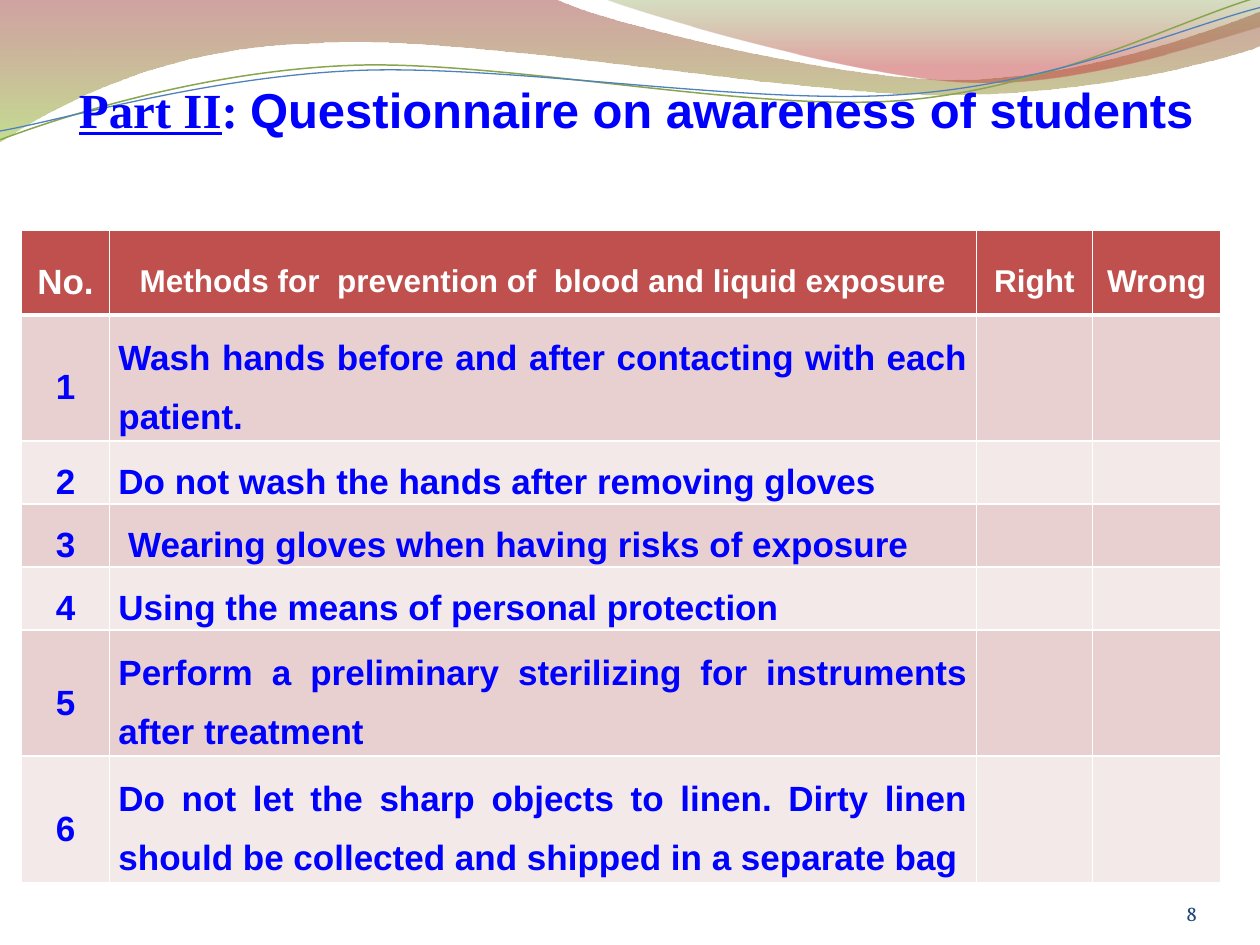
from lxml.etree import SubElement
from pptx import Presentation
from pptx.dml.color import RGBColor
from pptx.enum.text import MSO_ANCHOR as ANCHOR, PP_ALIGN as ALIGN
from pptx.oxml import parse_xml
from pptx.oxml.ns import nsdecls, qn
from pptx.util import Inches, Pt

BLUE = RGBColor(0x00, 0x00, 0xFF)
NAVY = RGBColor(0x1E, 0x46, 0x77)
WHITE = RGBColor(0xFF, 0xFF, 0xFF)
RED = RGBColor(0xC0, 0x50, 0x4D)
ROSE = RGBColor(0xE8, 0xD0, 0xD0)
PALE = RGBColor(0xF4, 0xE9, 0xE9)
GREEN_LINE = RGBColor(0x89, 0xA5, 0x4F)
BLUE_LINE = RGBColor(0x4F, 0x81, 0xBD)

# Content
TITLE = [("Part II", "Times New Roman", True),
         (": ", "Times New Roman", False),
         ("Questionnaire on awareness of students", "Arial", False)]
HEADER = ["No.", "Methods for  prevention of  blood and liquid exposure",
          "Right", "Wrong"]
METHODS = [
    "Wash hands before and after contacting with each patient. ",
    "Do not wash the hands after removing gloves ",
    " Wearing gloves when having risks of exposure",
    "Using the means of personal protection ",
    "Perform a preliminary sterilizing for instruments after treatment ",
    "Do not let the sharp objects to linen. Dirty linen should be collected "
    "and shipped in a separate bag",
]
COL_WIDTHS = [0.7, 6.88, 0.92, 1.02]
ROW_HEIGHTS = [0.67, 0.5, 0.35, 0.5, 0.48, 0.35, 0.77]
TABLE_HEIGHT = 5.17

# Waves: start point, then straight (2 numbers) or Bezier (6 numbers) pieces
BANDS = [
    ([(0, 0), (4.4, -0.01), (4.76, 0.17, 6.64, 0.63, 7.58, 0.63),
      (8.53, 0.63, 9.58, 0.26, 10, 0.09), (10.01, 0.36),
      (9.83, 0.44, 8.7, 0.76, 7.46, 0.75), (6.22, 0.75, 3.82, 0.28, 2.57, 0.34),
      (1.29, 0.36, 0.46, 0.83, -0.01, 1.13)],
     [(0, "973330", 45), (100, "95C238", 55)]),
    ([(4.79, -0.01), (5.09, 0.11, 6.82, 0.62, 7.69, 0.65),
      (8.56, 0.69, 9.61, 0.32, 10, 0.21), (10, 0)],
     [(0, "769537", 30), (80, "BE3330", 45)]),
]
LINES = [
    ([(0, 1.11), (0.48, 0.93, 1.58, 0.57, 2.77, 0.52),
      (3.95, 0.47, 5.93, 0.89, 7.13, 0.8), (8.33, 0.71, 9.38, 0.15, 9.98, -0.02)],
     GREEN_LINE, 0.85),
    ([(0, 1.04), (0.47, 0.96, 1.64, 0.61, 2.83, 0.56),
      (4.03, 0.51, 5.97, 0.84, 7.17, 0.75), (8.36, 0.67, 9.41, 0.21, 10, 0.06)],
     BLUE_LINE, 0.75),
]


def add_wave(slide, pieces, close):
    points = [(Inches(piece[-2]), Inches(piece[-1])) for piece in pieces]
    builder = slide.shapes.build_freeform(*points[0], scale=1.0)
    builder.add_line_segments(points[1:], close=close)
    sp = builder.convert_to_shape()
    sp.shadow.inherit = False
    # Bend the straight segments that have control points
    segments = list(sp.element.spPr.iter(qn("a:lnTo")))
    for segment, piece in zip(segments, pieces[1:]):
        if len(piece) == 6:
            pts = "".join(
                f'<a:pt x="{Inches(x) - sp.left}" y="{Inches(y) - sp.top}"/>'
                for x, y in zip(piece[::2], piece[1::2]))
            curve = parse_xml(
                f'<a:cubicBezTo {nsdecls("a")}>{pts}</a:cubicBezTo>')
            segment.getparent().replace(segment, curve)
    return sp


def fill_gradient(sp, stops):
    gs = "".join(
        f'<a:gs pos="{pos * 1000}"><a:srgbClr val="{color}">'
        f'<a:alpha val="{alpha * 1000}"/></a:srgbClr></a:gs>'
        for pos, color, alpha in stops)
    grad = parse_xml(f'<a:gradFill {nsdecls("a")}><a:gsLst>{gs}</a:gsLst>'
                     '<a:lin ang="5400000" scaled="0"/></a:gradFill>')
    sp.element.spPr.find(qn("a:custGeom")).addnext(grad)


def add_run(p, text, font, size, color, bold=True, underline=False):
    r = p.add_run()
    r.text = text
    r.font.name, r.font.size, r.font.bold = font, Pt(size), bold
    r.font.underline = underline
    r.font.color.rgb = color


def add_text_box(slide, box, margins, anchor, align):
    tf = slide.shapes.add_textbox(*map(Inches, box)).text_frame
    tf.word_wrap = True
    tf.vertical_anchor = anchor
    (tf.margin_left, tf.margin_top,
     tf.margin_right, tf.margin_bottom) = map(Inches, margins)
    tf.paragraphs[0].alignment = align
    return tf.paragraphs[0]


def style_cell(cell, fill, top, bottom):
    tc_pr = cell._tc.get_or_add_tcPr()
    for side, width in (("L", 1), ("R", 1), ("T", top), ("B", bottom)):
        ln = SubElement(tc_pr, qn(f"a:ln{side}"), w=str(Pt(width)))
        SubElement(SubElement(ln, qn("a:solidFill")), qn("a:srgbClr"),
                   val=str(WHITE))
    cell.fill.solid()
    cell.fill.fore_color.rgb = fill


def write_cell(cell, text, size, color, align, space):
    cell.vertical_anchor = ANCHOR.MIDDLE
    cell.margin_left = cell.margin_right = Inches(0.07)
    cell.margin_top = cell.margin_bottom = 0
    p = cell.text_frame.paragraphs[0]
    p.alignment = align
    p.line_spacing = 1.5
    p.space_before = p.space_after = Pt(space)
    add_run(p, text, "Arial", size, color)


def add_method_table(slide):
    rows = [HEADER] + [[str(n), m, "", ""] for n, m in enumerate(METHODS, 1)]
    frame = slide.shapes.add_table(
        len(rows), len(HEADER), Inches(0.17), Inches(1.83),
        Inches(sum(COL_WIDTHS)), Inches(TABLE_HEIGHT))
    table = frame.table
    for col, width in zip(table.columns, COL_WIDTHS):
        col.width = Inches(width)
    for i, (row, height) in enumerate(zip(rows, ROW_HEIGHTS)):
        table.rows[i].height = Inches(height)
        fill = RED if i == 0 else ROSE if i % 2 else PALE
        for j, text in enumerate(row):
            cell = table.cell(i, j)
            style_cell(cell, fill, 3 if i == 1 else 1, 3 if i == 0 else 1)
            if text:
                write_cell(cell, text,
                           size=18 if i == 0 and j else 20,
                           color=BLUE if i else WHITE,
                           align=ALIGN.JUSTIFY if i and j else ALIGN.CENTER,
                           space=0 if i == 0 and j == 1 else 6)
    # Setting the rows shrinks the frame, so its height comes last
    frame.height = Inches(TABLE_HEIGHT)


def main():
    prs = Presentation()
    prs.slide_width, prs.slide_height = Inches(10), Inches(7.5)
    slide = prs.slides.add_slide(prs.slide_layouts[6])

    # Decorative waves
    for pieces, stops in BANDS:
        sp = add_wave(slide, pieces, close=True)
        fill_gradient(sp, stops)
        sp.line.fill.background()
    for pieces, color, width in LINES:
        sp = add_wave(slide, pieces, close=False)
        sp.fill.background()
        sp.line.color.rgb = color
        sp.line.width = Pt(width)

    # Title
    p = add_text_box(slide, (0.5, 0.58, 9.17, 1.58), (0, 0.05, 0.07, 0.05),
                     ANCHOR.TOP, ALIGN.CENTER)
    p.space_before = Pt(5.6)
    for text, font, underline in TITLE:
        add_run(p, text, font, 28, BLUE, underline=underline)

    add_method_table(slide)

    # Page number
    p = add_text_box(slide, (8.67, 6.95, 0.83, 0.4), (0, 0, 0, 0),
                     ANCHOR.BOTTOM, ALIGN.RIGHT)
    add_run(p, "8", "Vollkorn", 12, NAVY, bold=False)

    prs.save("out.pptx")


if __name__ == "__main__":
    main()
